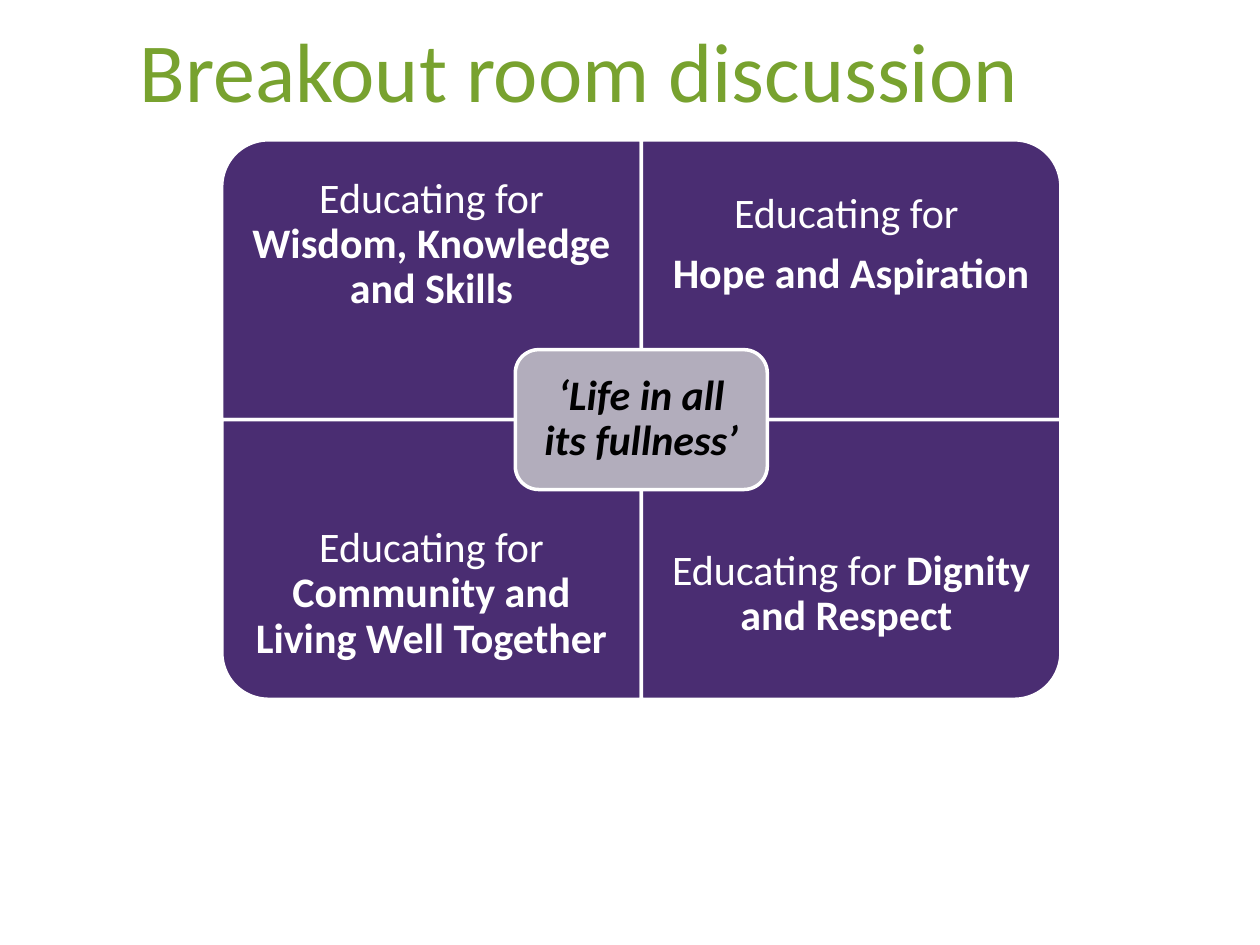
from dataclasses import dataclass

from pptx import Presentation
from pptx.dml.color import RGBColor
from pptx.enum.shapes import MSO_SHAPE
from pptx.enum.text import MSO_ANCHOR, MSO_AUTO_SIZE, PP_ALIGN
from pptx.util import Inches, Pt

PURPLE = RGBColor(0x4A, 0x2D, 0x72)
GREY = RGBColor(0xB2, 0xAD, 0xBC)
GREEN = RGBColor(0x78, 0xA2, 0x2F)
WHITE = RGBColor(0xFF, 0xFF, 0xFF)
BLACK = RGBColor(0x00, 0x00, 0x00)

FONT = "Calibri"
MID_X, MID_Y = 5.09, 3.33
QUAD_W, QUAD_H = 3.33, 2.22
LABEL_H = 1.67
CORE_W, CORE_H, CORE_PAD = 2, 1.11, 0.06


@dataclass(frozen=True)
class Run:
    text: str
    bold: bool = False
    italic: bool = False


@dataclass(frozen=True)
class Quadrant:
    col: int
    row: int
    rotation: int
    paragraphs: list[list[Run]]


LEAD = Run("Educating for ")
QUADRANTS = [
    Quadrant(0, 0, 270, [[LEAD, Run("Wisdom, Knowledge and Skills", bold=True)]]),
    Quadrant(1, 0, 0, [[LEAD], [Run("Hope and Aspiration", bold=True)]]),
    Quadrant(0, 1, 180, [[LEAD, Run("Community and Living Well Together", bold=True)]]),
    Quadrant(1, 1, 90, [[LEAD, Run("Dignity and Respect ", bold=True)]]),
]


def add_run(p, run: Run, size: int, color: RGBColor) -> None:
    r = p.add_run()
    r.text = run.text
    style = {"name": FONT, "size": Pt(size), "bold": run.bold, "italic": run.italic}
    for name, value in style.items():
        setattr(r.font, name, value)
    r.font.color.rgb = color


def add_panel(s, kind: MSO_SHAPE, x: float, y: float, w: float, h: float,
              fill: RGBColor, rotation: int = 0) -> None:
    """Draw a white-edged shape that covers the given box once rotated."""
    sw, sh = (h, w) if rotation % 180 else (w, h)
    sp = s.shapes.add_shape(kind, Inches(x + (w - sw) / 2), Inches(y + (h - sh) / 2),
                            Inches(sw), Inches(sh))
    sp.rotation = rotation
    sp.shadow.inherit = False
    sp.fill.solid()
    sp.fill.fore_color.rgb = fill
    sp.line.color.rgb = WHITE
    sp.line.width = Pt(2)


def add_label(s, x: float, y: float, w: float, h: float, inset: float,
              paragraphs: list[list[Run]], color: RGBColor) -> None:
    tf = s.shapes.add_textbox(Inches(x), Inches(y), Inches(w), Inches(h)).text_frame
    frame = {"word_wrap": True, "vertical_anchor": MSO_ANCHOR.MIDDLE}
    frame |= {f"margin_{side}": Inches(inset) for side in ("left", "top", "right", "bottom")}
    for name, value in frame.items():
        setattr(tf, name, value)
    layout = {"alignment": PP_ALIGN.CENTER, "line_spacing": 0.9, "space_after": Pt(8.4)}
    for i, runs in enumerate(paragraphs):
        p = tf.add_paragraph() if i else tf.paragraphs[0]
        for name, value in layout.items():
            setattr(p, name, value)
        for run in runs:
            add_run(p, run, 24, color)


def add_quadrant(s, quad: Quadrant) -> None:
    """Draw a quadrant with its label against the outer edge."""
    x = MID_X + (quad.col - 1) * QUAD_W
    y = MID_Y + (quad.row - 1) * QUAD_H
    add_panel(s, MSO_SHAPE.ROUND_1_RECTANGLE, x, y, QUAD_W, QUAD_H, PURPLE, quad.rotation)
    label_y = y + quad.row * (QUAD_H - LABEL_H)
    add_label(s, x, label_y, QUAD_W, LABEL_H, 0.19, quad.paragraphs, WHITE)


def add_core(s) -> None:
    x, y = MID_X - CORE_W / 2, MID_Y - CORE_H / 2
    add_panel(s, MSO_SHAPE.ROUNDED_RECTANGLE, x, y, CORE_W, CORE_H, GREY)
    add_label(s, x + CORE_PAD, y + CORE_PAD, CORE_W - 2 * CORE_PAD, CORE_H - 2 * CORE_PAD,
              0.1, [[Run("‘Life in all its fullness’", bold=True, italic=True)]], BLACK)


def add_title(s) -> None:
    sp = s.shapes.add_textbox(Inches(1.01), Inches(0.1), Inches(7.25), Inches(0.91))
    sp.fill.solid()
    sp.fill.fore_color.rgb = WHITE
    tf = sp.text_frame
    tf.word_wrap = False
    tf.auto_size = MSO_AUTO_SIZE.SHAPE_TO_FIT_TEXT
    add_run(tf.paragraphs[0], Run("Breakout room discussion"), 48, GREEN)


def main() -> None:
    prs = Presentation()
    prs.slide_width, prs.slide_height = Inches(10), Inches(7.5)
    s = prs.slides.add_slide(prs.slide_layouts[6])
    for quad in QUADRANTS:
        add_quadrant(s, quad)
    add_core(s)
    add_title(s)
    prs.save("out.pptx")


if __name__ == "__main__":
    main()
